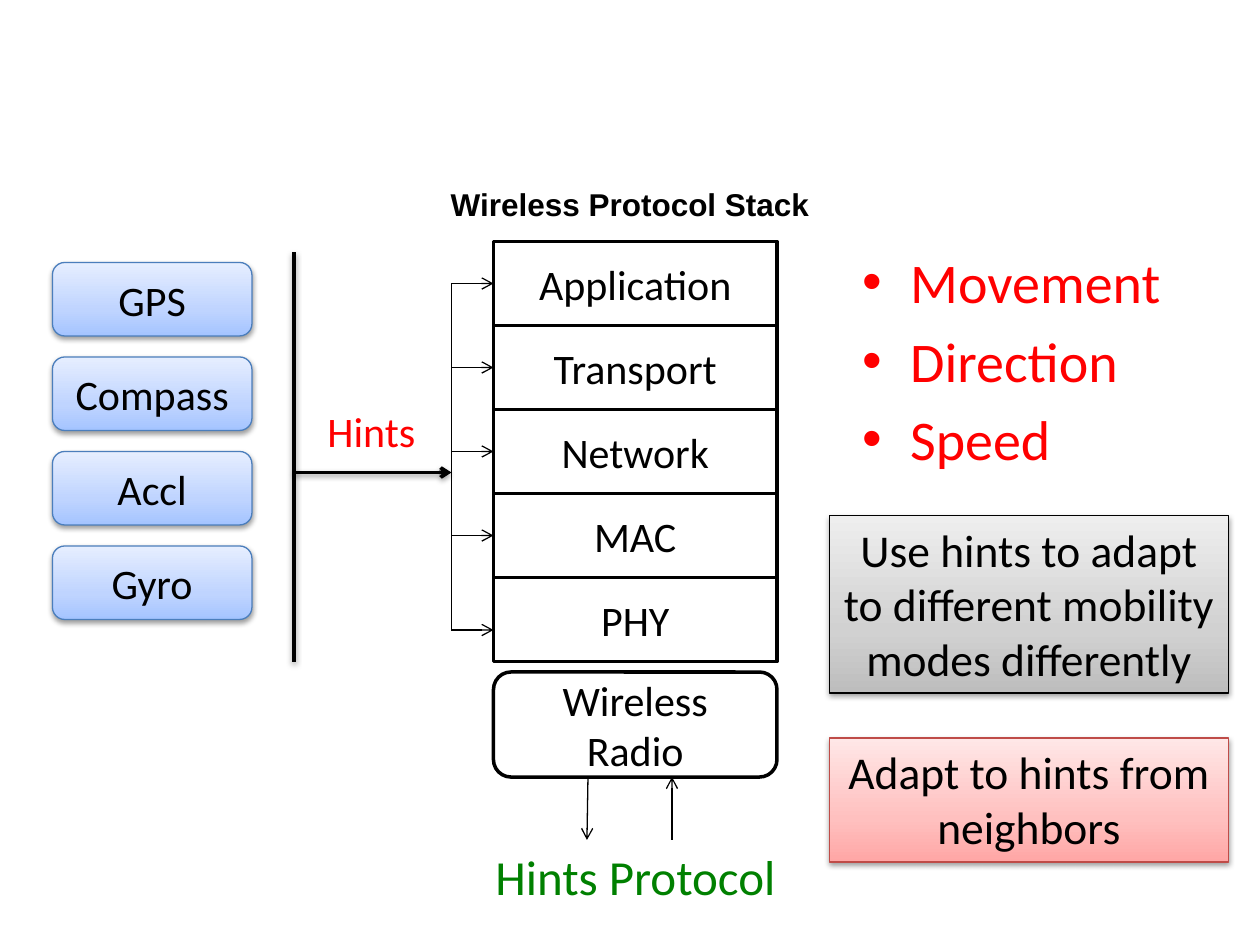
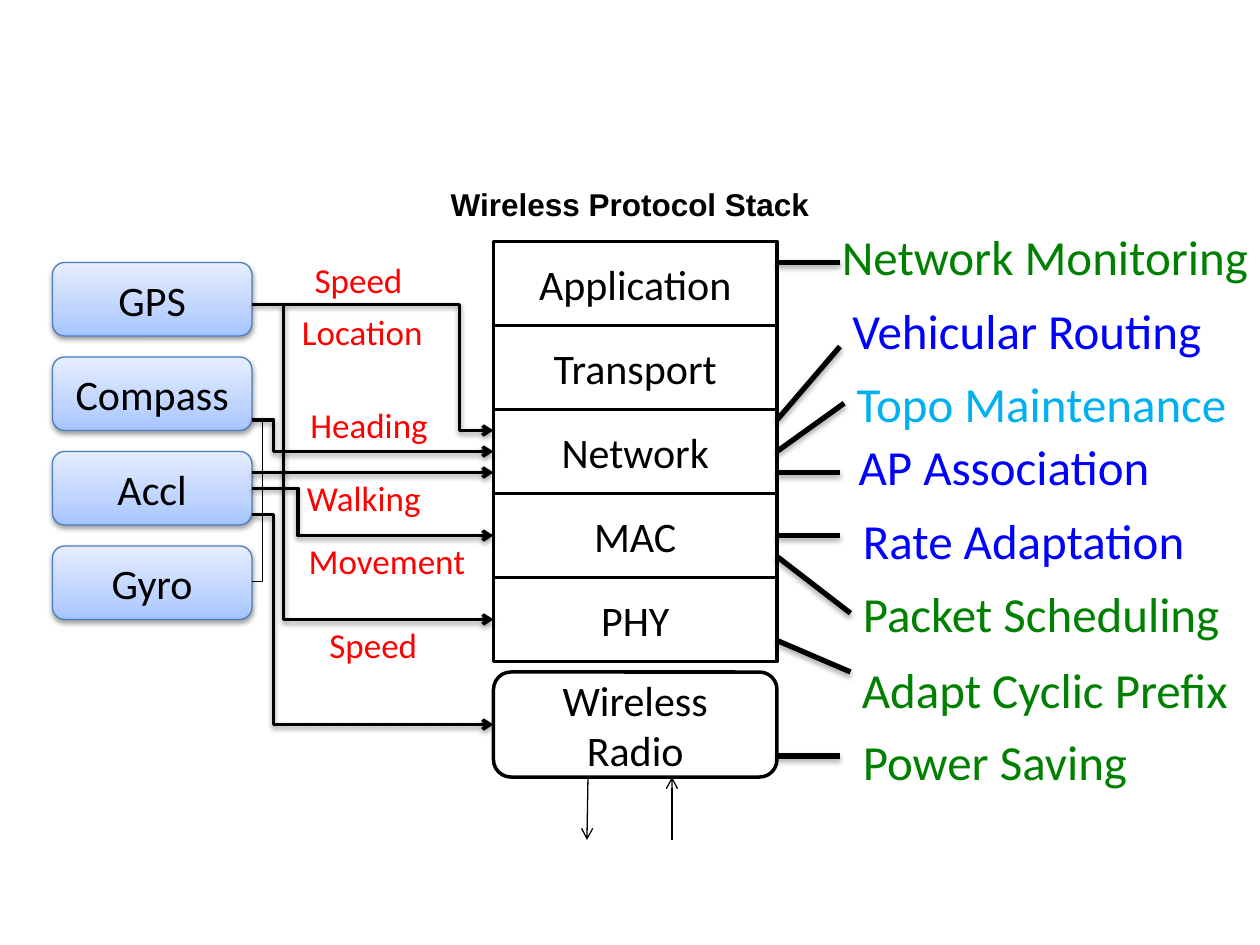
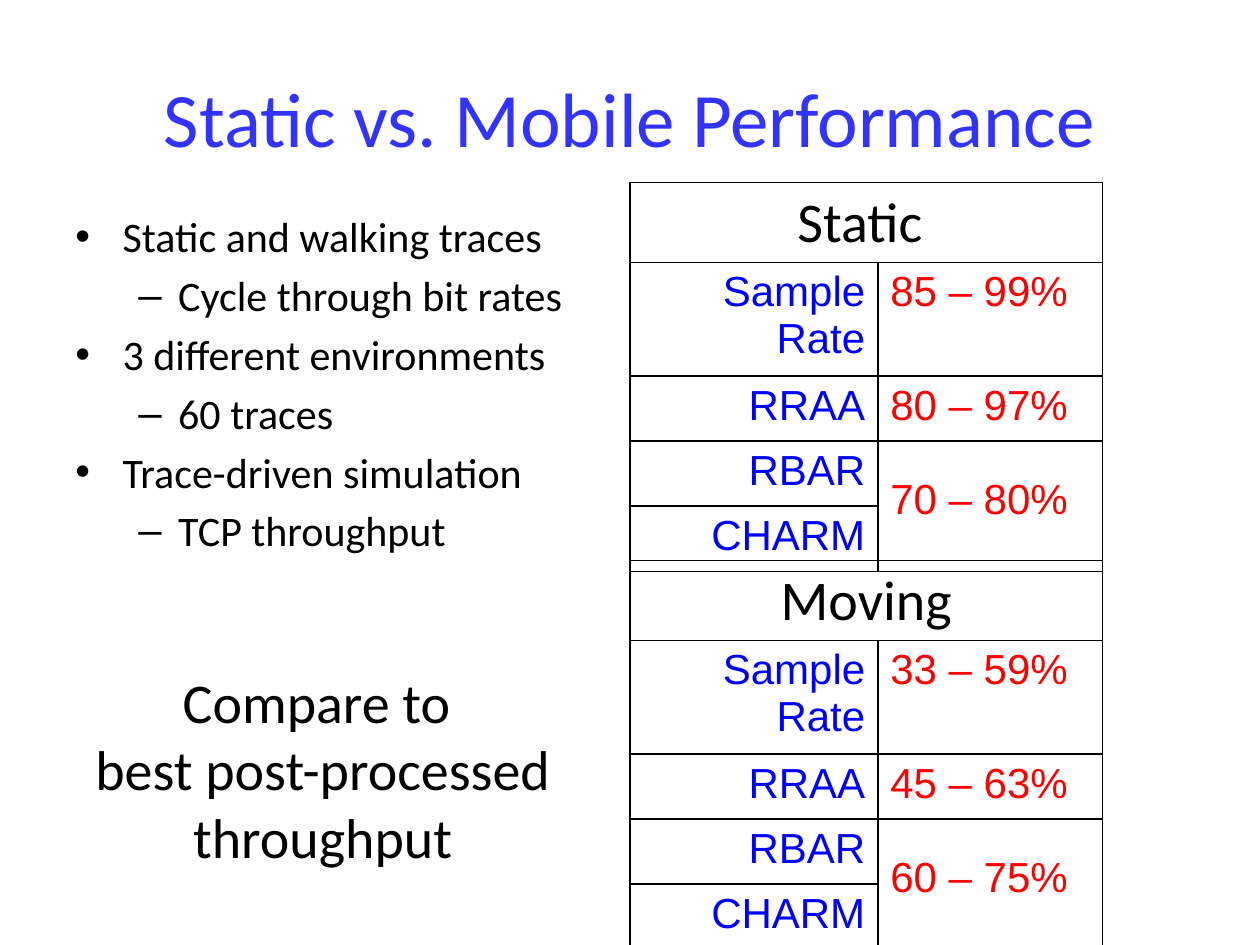
from lxml import etree
from pptx import Presentation
from pptx import util as u
from pptx.dml.color import RGBColor
from pptx.enum import shapes, text
from pptx.oxml.ns import qn

PX = 7620
BLACK = RGBColor(0, 0, 0)
WHITE = RGBColor(255, 255, 255)
RED = RGBColor(255, 0, 0)
GREEN = RGBColor(0, 128, 0)
BLUE = RGBColor(0, 0, 255)
SKY = RGBColor(0, 176, 240)
TITLE = RGBColor(51, 51, 255)
STEEL = RGBColor(75, 126, 188)
BRICK = RGBColor(191, 76, 72)
ICE = [RGBColor(164, 196, 255), RGBColor(191, 212, 255), RGBColor(230, 238, 255)]
GRAY = [RGBColor(189, 189, 189), RGBColor(209, 209, 209), RGBColor(238, 238, 238)]
ROSE = [RGBColor(255, 166, 165), RGBColor(255, 192, 191), RGBColor(255, 231, 231)]

RECT = shapes.MSO_SHAPE.RECTANGLE
ROUND = shapes.MSO_SHAPE.ROUNDED_RECTANGLE
LEFT = text.PP_ALIGN.LEFT
MID = text.PP_ALIGN.CENTER
RIGHT = text.PP_ALIGN.RIGHT
TOP = text.MSO_ANCHOR.TOP
HALF = text.MSO_ANCHOR.MIDDLE
BULLETS = [("•", 45, -45), ("–", 98, -38)]


def px(*nums):
    return [u.Emu(n * PX) for n in nums]


def add(node, tag, **attrs):
    return etree.SubElement(node, qn("a:" + tag), {k: str(v) for k, v in attrs.items()})


class Deck:
    def __init__(self):
        self.prs = Presentation()
        self.prs.slide_width, self.prs.slide_height = px(1200, 900)
        self.slide = None

    def page(self):
        self.slide = self.prs.slides.add_slide(self.prs.slide_layouts[6])

    def put(self, para, words, size, color, align=LEFT, font="Calibri", bold=False):
        para.alignment = align
        run = para.add_run()
        run.text = words
        run.font.name = font
        run.font.size = u.Pt(size)
        run.font.bold = bold
        run.font.color.rgb = color

    def label(self, at, lines, size, color, align=LEFT, wrap=False, anchor=TOP, levels=None, **style):
        frame = self.slide.shapes.add_textbox(*px(*at)).text_frame
        frame.word_wrap = wrap
        frame.vertical_anchor = anchor
        for i, words in enumerate(lines):
            para = frame.paragraphs[0] if i == 0 else frame.add_paragraph()
            self.put(para, words, size, color, align, **style)
            if levels:
                self.bullet(para, levels[i])

    def bullet(self, para, level):
        mark, left, hang = BULLETS[level]
        para.level = level
        props = para._p.get_or_add_pPr()
        props.set("marL", str(left * PX))
        props.set("indent", str(hang * PX))
        add(add(props, "spcBef"), "spcPct", val=20000)
        add(props, "buFont", typeface="Arial")
        add(props, "buChar", char=mark)

    def shade(self, shape, drop, alpha=38, dist=20000):
        effect = add(shape.element.spPr, "effectLst")
        if drop:
            outer = add(effect, "outerShdw", blurRad=40000, dist=dist, dir=5400000, rotWithShape=0)
            add(add(outer, "srgbClr", val=BLACK), "alpha", val=alpha * 1000)

    def box(self, at, words, kind=RECT, grad=None, edge=BLACK, size=24, anchor=HALF):
        shape = self.slide.shapes.add_shape(kind, *px(*at))
        if grad:
            shape.fill.gradient()
            fill = shape.element.spPr.find(qn("a:gradFill"))
            for child in list(fill):
                fill.remove(child)
            stops = add(fill, "gsLst")
            for pos, color in zip((0, 35000, 100000), grad):
                add(add(stops, "gs", pos=pos), "srgbClr", val=color)
            add(fill, "lin", ang=16200000, scaled=0)
        else:
            shape.fill.solid()
            shape.fill.fore_color.rgb = WHITE
        shape.line.color.rgb = edge
        shape.line.width = u.Pt(0.75 if grad else 2)
        self.shade(shape, grad)
        frame = shape.text_frame
        frame.word_wrap = True
        frame.vertical_anchor = anchor
        self.put(frame.paragraphs[0], words, size, BLACK, MID)

    def line(self, ends, width=0.75, arrow=True, bend=None):
        kind = shapes.MSO_CONNECTOR.STRAIGHT if bend is None else shapes.MSO_CONNECTOR.ELBOW
        link = self.slide.shapes.add_connector(kind, *px(*ends))
        link.line.color.rgb = BLACK
        link.line.width = u.Pt(width)
        props = link.element.spPr
        if arrow:
            add(props.find(qn("a:ln")), "tailEnd", type="arrow")
        if bend is not None:
            guides = props.find(qn("a:prstGeom")).find(qn("a:avLst"))
            add(guides, "gd", name="adj1", fmla=f"val {round(bend * 100000)}")
        if width == 3:
            self.shade(link, True, 35, 23000)
        else:
            self.shade(link, width == 2)

    def stack(self):
        for i, name in enumerate(["Application", "Transport", "Network", "MAC", "PHY"]):
            self.box((470, 230 + 80 * i, 270, 80), name)
        self.box((470, 640, 270, 100), "Wireless Radio", ROUND)
        self.label((410, 170, 380, 48), ["Wireless Protocol Stack"], 18, BLACK, MID, True,
                   font="Arial", bold=True)
        for i, name in enumerate(["GPS", "Compass", "Accl", "Gyro"]):
            self.box((50, 250 + 90 * i, 190, 70), name, ROUND, ICE, STEEL)
        self.line((560, 740, 559, 800))
        self.line((640, 800, 640, 740))

    def table(self, top, head, rates):
        grid = self.slide.shapes.add_table(5, 2, *px(600, top, 450, 310)).table
        grid.first_row = grid.horz_banding = False
        for col, width in zip(grid.columns, px(236, 214)):
            col.width = width
        for row in grid.rows:
            row.height = u.Emu(62 * PX)
        grid.cell(0, 0).merge(grid.cell(0, 1))
        grid.cell(3, 1).merge(grid.cell(4, 1))
        self.put(grid.cell(0, 0).text_frame.paragraphs[0], head, 32, BLACK, MID)
        for i, name in enumerate(["Sample Rate", "RRAA", "RBAR", "CHARM"], 1):
            self.put(grid.cell(i, 0).text_frame.paragraphs[0], name, 24, BLUE, RIGHT, "Arial")
        for i, rate in enumerate(rates, 1):
            self.put(grid.cell(i, 1).text_frame.paragraphs[0], rate, 24, RED, LEFT, "Arial")
        grid.cell(3, 1).margin_top = u.Emu(34 * PX)
        for cell in grid.iter_cells():
            props = cell._tc.get_or_add_tcPr()
            for side in ("lnL", "lnR", "lnT", "lnB"):
                edge = add(props, side, w=12700)
                add(add(edge, "solidFill"), "srgbClr", val=BLACK)
            cell.fill.background()


def hints(deck):
    deck.page()
    deck.stack()
    deck.line((430, 600, 430, 270), arrow=False)
    for y in (270, 350, 430, 510, 600):
        deck.line((430, y, 470, y))
    deck.line((280, 450, 430, 450), 2)
    deck.line((280, 240, 280, 630), 2, False)
    deck.label((300, 380, 109, 60), ["Hints"], 24, RED)
    deck.label((810, 230, 310, 260), ["Movement", "Direction", "Speed"], 32, RED,
               wrap=True, levels=[0, 0, 0])
    deck.box((790, 491, 380, 169), "Use hints to adapt to different mobility modes differently",
             grad=GRAY, size=26, anchor=TOP)
    deck.box((790, 703, 380, 118), "Adapt to hints from neighbors",
             grad=ROSE, edge=BRICK, size=26, anchor=TOP)
    deck.label((460, 800, 294, 68), ["Hints Protocol"], 28, GREEN)


def uses(deck):
    deck.page()
    deck.stack()
    for x, y, end, bend in [(240, 465, 510, 0.19), (240, 400, 430, 0.09), (240, 450, 450, None),
                            (240, 290, 410, 0.86), (270, 290, 590, 0), (240, 490, 690, 0.09)]:
        deck.line((x, y, 470, end), 2, bend=bend)
    deck.line((240, 554, 250, 400), arrow=False, bend=1)
    for start, x, y in [(250, 800, 250), (400, 800, 330), (430, 804, 384), (450, 800, 450),
                        (510, 800, 510), (530, 810, 584), (610, 810, 640), (720, 800, 720)]:
        deck.line((740, start, x, y), 3, False)
    for word, x, y, w in [("Speed", 287, 240, 109), ("Location", 275, 290, 140),
                          ("Heading", 283, 378, 137), ("Walking", 280, 448, 133),
                          ("Movement", 281, 508, 175), ("Speed", 301, 588, 109)]:
        deck.label((x, y, w, 53), [word], 20, RED, MID)
    for words, x, y, w, color in [
        ("Network Monitoring", 790, 210, 415, GREEN), ("Vehicular Routing", 800, 280, 360, BLUE),
        ("Topo Maintenance", 804, 350, 380, SKY), ("AP Association", 806, 410, 305, BLUE),
        ("Rate Adaptation", 810, 480, 334, BLUE), ("Packet Scheduling", 810, 550, 367, GREEN),
        ("Adapt Cyclic Prefix", 809, 622, 388, GREEN), ("Power Saving", 810, 691, 278, GREEN),
    ]:
        deck.label((x, y, w, 68), [words], 28, color)


def rates(deck):
    deck.page()
    deck.label((60, 36, 1080, 150), ["Static vs. Mobile Performance"], 44, TITLE, MID, True, HALF)
    deck.label((60, 195, 530, 354),
               ["Static and walking traces", "Cycle through bit rates", "3 different environments",
                "60 traces", "Trace-driven simulation", "TCP throughput"],
               24, BLACK, wrap=True, levels=[0, 1] * 3)
    deck.table(174, "Static ", ["85 – 99%", "80 – 97%", "70 – 80%"])
    deck.table(534, "Moving", ["33 – 59%", "45 – 63%", "60 – 75%"])
    deck.label((76, 630, 463, 206), ["Compare to ", "best post-processed", "throughput"],
               32, BLACK, MID)


def main():
    deck = Deck()
    hints(deck)
    uses(deck)
    rates(deck)
    deck.prs.save("out.pptx")


if __name__ == "__main__":
    main()
